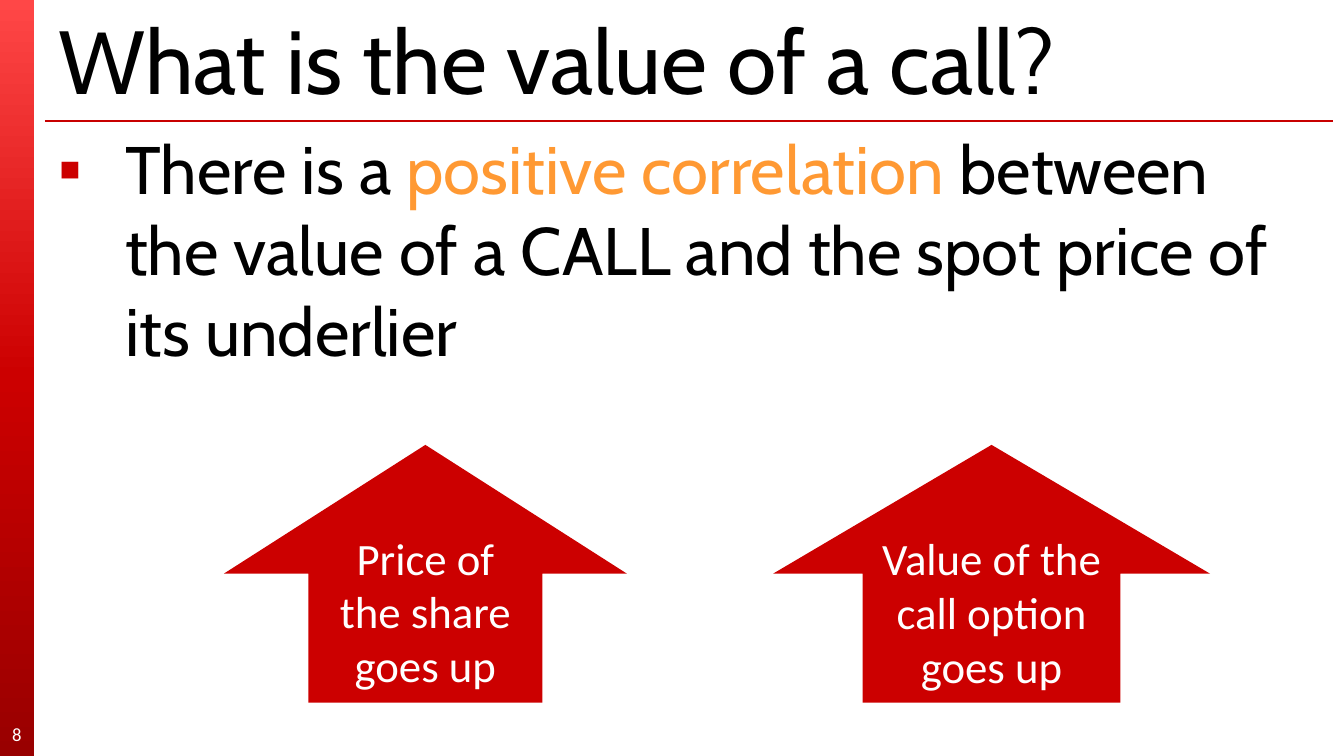
"""Build the slide on how a call option's value follows its underlier."""
from dataclasses import dataclass

from lxml import etree
from pptx import Presentation
from pptx.dml.color import RGBColor
from pptx.enum.shapes import MSO_CONNECTOR, MSO_SHAPE
from pptx.enum.text import MSO_ANCHOR, PP_ALIGN
from pptx.oxml.ns import qn
from pptx.util import Cm, Pt

STRAIGHT = MSO_CONNECTOR.STRAIGHT
RECTANGLE = MSO_SHAPE.RECTANGLE
UP_ARROW = MSO_SHAPE.UP_ARROW
MIDDLE = MSO_ANCHOR.MIDDLE
TOP = MSO_ANCHOR.TOP
LEFT = PP_ALIGN.LEFT
CENTER = PP_ALIGN.CENTER

BLACK = RGBColor(0x00, 0x00, 0x00)
WHITE = RGBColor(0xFF, 0xFF, 0xFF)
RED = RGBColor(0xCC, 0x00, 0x00)
RULE_RED = RGBColor(0xC8, 0x00, 0x00)
LIGHT_RED = RGBColor(0xFF, 0x47, 0x47)
DARK_RED = RGBColor(0x99, 0x00, 0x00)
ORANGE = RGBColor(0xFF, 0x99, 0x33)

HEADING_FONT = "Cabin"
LABEL_FONT = "Calibri"
SLIDE_WIDTH = 25.4
SLIDE_HEIGHT = 14.29
BAR_WIDTH = 0.64
CONTENT_LEFT = 0.85
RULE_TOP = 2.29
ARROW_TOP = 8.41
ARROW_HEIGHT = 4.87


@dataclass(frozen=True)
class Run:
    text: str
    color: RGBColor


@dataclass(frozen=True)
class TextBlock:
    box: tuple[float, float, float, float]
    runs: tuple[Run, ...]
    font: str
    size: int
    anchor: MSO_ANCHOR = MIDDLE
    alignment: PP_ALIGN = LEFT
    has_insets: bool = True
    bullet: str = ""


@dataclass(frozen=True)
class Arrow:
    left: float
    width: float
    shaft: float
    label: str


TEXT_BLOCKS = (
    TextBlock((CONTENT_LEFT, 0.15, 24.34, 1.91),
              (Run("What is the value of a call?", BLACK),), HEADING_FONT, 48),
    TextBlock((CONTENT_LEFT, RULE_TOP, 23.71, 11),
              (Run("There is a ", BLACK),
               Run("positive correlation ", ORANGE),
               Run("between the value of a CALL and the spot price of its underlier", BLACK)),
              HEADING_FONT, 36, anchor=TOP, bullet="▪"),
    TextBlock((0, 13.49, BAR_WIDTH, 0.76), (Run("8", WHITE),), LABEL_FONT, 10,
              alignment=CENTER, has_insets=False),
)
ARROWS = (
    Arrow(4.23, 7.62, 0.58, "Price of the share goes up"),
    Arrow(14.61, 8.26, 0.59, "Value of the call option goes up"),
)


def add_side_bar(slide) -> None:
    """Draw the vertical gradient bar at the left edge."""
    bar = slide.shapes.add_shape(RECTANGLE, 0, 0, Cm(BAR_WIDTH), Cm(SLIDE_HEIGHT))
    bar.shadow.inherit = False
    bar.line.fill.background()
    bar.fill.gradient()
    gradient = bar._element.spPr.find(qn("a:gradFill"))
    stops = gradient.find(qn("a:gsLst"))
    for stop in list(stops):
        stops.remove(stop)
    for position, color in ((0, LIGHT_RED), (50, RED), (100, DARK_RED)):
        stop = etree.SubElement(stops, qn("a:gs"), pos=str(position * 1000))
        etree.SubElement(stop, qn("a:srgbClr"), val=str(color))
    gradient.find(qn("a:lin")).set("ang", str(90 * 60000))


def add_title_rule(slide) -> None:
    """Draw the thin line below the title."""
    rule = slide.shapes.add_connector(
        STRAIGHT, Cm(CONTENT_LEFT), Cm(RULE_TOP), Cm(25.2), Cm(RULE_TOP))
    rule.line.color.rgb = RULE_RED
    rule.line.width = Pt(0.75)
    etree.SubElement(rule._element.spPr, qn("a:effectLst"))


def add_bullet(paragraph, character: str) -> None:
    """Give a paragraph a hanging red bullet."""
    properties = paragraph._p.get_or_add_pPr()
    properties.set("marL", str(Cm(1.27)))
    properties.set("indent", str(-Cm(1.27)))
    color = etree.SubElement(properties, qn("a:buClr"))
    etree.SubElement(color, qn("a:srgbClr"), val=str(RED))
    etree.SubElement(properties, qn("a:buFont"), typeface="Arial")
    etree.SubElement(properties, qn("a:buChar"), char=character)


def add_text_block(slide, block: TextBlock) -> None:
    """Place a one-paragraph text box."""
    shape = slide.shapes.add_textbox(*(Cm(length) for length in block.box))
    frame = shape.text_frame
    frame.word_wrap = True
    frame.vertical_anchor = block.anchor
    if not block.has_insets:
        frame.margin_left = frame.margin_right = 0
        frame.margin_top = frame.margin_bottom = 0
    paragraph = frame.paragraphs[0]
    paragraph.alignment = block.alignment
    if block.bullet:
        add_bullet(paragraph, block.bullet)
    paragraph.font.name = block.font
    paragraph.font.size = Pt(block.size)
    for part in block.runs:
        run = paragraph.add_run()
        run.text = part.text
        run.font.color.rgb = part.color


def add_arrow(slide, arrow: Arrow) -> None:
    """Draw a labelled red arrow pointing up."""
    shape = slide.shapes.add_shape(
        UP_ARROW, Cm(arrow.left), Cm(ARROW_TOP), Cm(arrow.width), Cm(ARROW_HEIGHT))
    shape.shadow.inherit = False
    shape.adjustments[0] = arrow.shaft
    shape.adjustments[1] = 0.5
    shape.fill.solid()
    shape.fill.fore_color.rgb = RED
    shape.line.fill.background()
    frame = shape.text_frame
    frame.word_wrap = True
    frame.vertical_anchor = MIDDLE
    paragraph = frame.paragraphs[0]
    paragraph.text = arrow.label
    paragraph.alignment = CENTER
    paragraph.font.name = LABEL_FONT
    paragraph.font.size = Pt(24)
    paragraph.font.color.rgb = WHITE


def main() -> None:
    """Assemble and save the presentation."""
    presentation = Presentation()
    presentation.slide_width = Cm(SLIDE_WIDTH)
    presentation.slide_height = Cm(SLIDE_HEIGHT)
    slide = presentation.slides.add_slide(presentation.slide_layouts[6])
    add_side_bar(slide)
    add_title_rule(slide)
    for block in TEXT_BLOCKS:
        add_text_block(slide, block)
    for arrow in ARROWS:
        add_arrow(slide, arrow)
    presentation.save("out.pptx")


if __name__ == "__main__":
    main()
